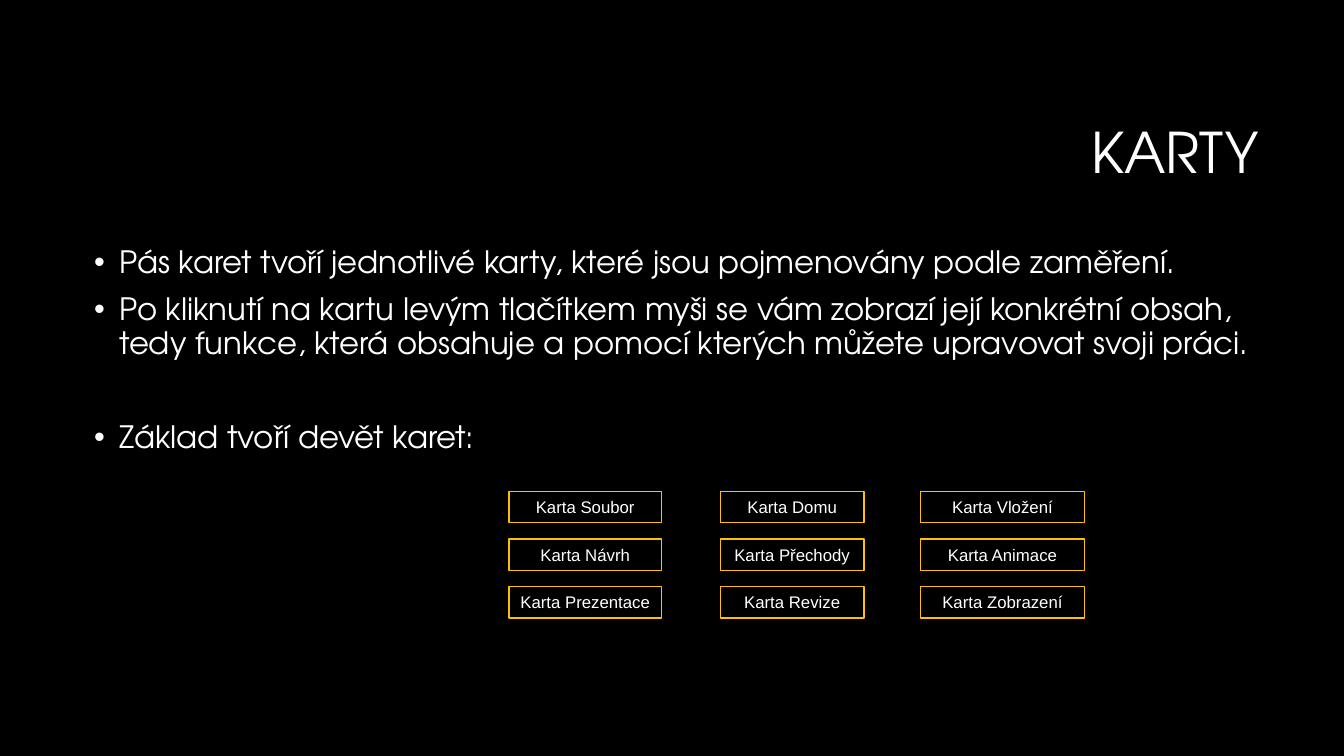
"""Build the slide about the ribbon cards."""
import pptx
import pptx.dml.color
import pptx.enum.shapes
import pptx.enum.text
import pptx.oxml
import pptx.util
from pptx.oxml.ns import nsdecls

Cm = pptx.util.Cm
Pt = pptx.util.Pt
ALIGN = pptx.enum.text.PP_ALIGN
ANCHOR = pptx.enum.text.MSO_ANCHOR
BLACK = pptx.dml.color.RGBColor(0x00, 0x00, 0x00)
WHITE = pptx.dml.color.RGBColor(0xFF, 0xFF, 0xFF)
GOLD = pptx.dml.color.RGBColor(0xFF, 0xC0, 0x00)
HEADING_FORMAT = {"name": "TeX Gyre Adventor", "size": Pt(40)}
POINT_FORMAT = {"name": "TeX Gyre Adventor", "size": Pt(22)}
CARD_FORMAT = {"name": "Arial", "size": Pt(12)}


def write(paragraph, text, font_format, **paragraph_format):
    paragraph.text = text
    for name, value in paragraph_format.items():
        setattr(paragraph, name, value)
    for name, value in font_format.items():
        setattr(paragraph.font, name, value)
    paragraph.font.color.rgb = WHITE


presentation = pptx.Presentation()
presentation.slide_width = Cm(33.87)
presentation.slide_height = Cm(19.05)
slide = presentation.slides.add_slide(presentation.slide_layouts[6])
slide.background.fill.solid()
slide.background.fill.fore_color.rgb = BLACK

heading = slide.shapes.add_textbox(Cm(8.05), Cm(2.13), Cm(23.93), Cm(3.58)).text_frame
heading.word_wrap = True
heading.vertical_anchor = ANCHOR.MIDDLE
write(heading.paragraphs[0], "KARTY", HEADING_FORMAT, alignment=ALIGN.RIGHT, line_spacing=0.9)

points = [
    ("Pás karet tvoří jednotlivé karty, které jsou pojmenovány podle zaměření.", 0),
    ("Po kliknutí na kartu levým tlačítkem myši se vám zobrazí její konkrétní obsah, "
     "tedy funkce, která obsahuje a pomocí kterých můžete upravovat svoji práci.", 10),
    ("Základ tvoří devět karet:", 43.5),
]
explanation = slide.shapes.add_textbox(Cm(2.12), Cm(6.1), Cm(30.05), Cm(11.18)).text_frame
explanation.word_wrap = True
for index, (point, space) in enumerate(points):
    paragraph = explanation.add_paragraph() if index else explanation.paragraphs[0]
    properties = paragraph._p.get_or_add_pPr()
    properties.set("marL", str(Cm(0.64)))
    properties.set("indent", str(-Cm(0.64)))
    for bullet in ('<a:buFont %s typeface="Arial"/>', '<a:buChar %s char="•"/>'):
        properties.append(pptx.oxml.parse_xml(bullet % nsdecls("a")))
    write(paragraph, point, POINT_FORMAT, line_spacing=0.9, space_before=Pt(space))

columns = [(12.83, 3.84), (18.16, 3.61), (23.2, 4.13)]
card_rows = [
    ("Soubor", "Domu", "Vložení"),
    ("Návrh", "Přechody", "Animace"),
    ("Prezentace", "Revize", "Zobrazení"),
]
for row, names in enumerate(card_rows):
    for (left, width), name in zip(columns, names):
        card = slide.shapes.add_shape(
            pptx.enum.shapes.MSO_SHAPE.ACTION_BUTTON_CUSTOM,
            Cm(left), Cm(12.38 + 1.2 * row), Cm(width), Cm(0.79))
        card.shadow.inherit = False
        card.fill.solid()
        card.fill.fore_color.rgb = BLACK
        card.line.color.rgb = GOLD
        card.line.width = Pt(1)
        card.text_frame.word_wrap = False
        card.text_frame.vertical_anchor = ANCHOR.MIDDLE
        write(card.text_frame.paragraphs[0], f"Karta {name}", CARD_FORMAT, alignment=ALIGN.CENTER)

presentation.save("out.pptx")
